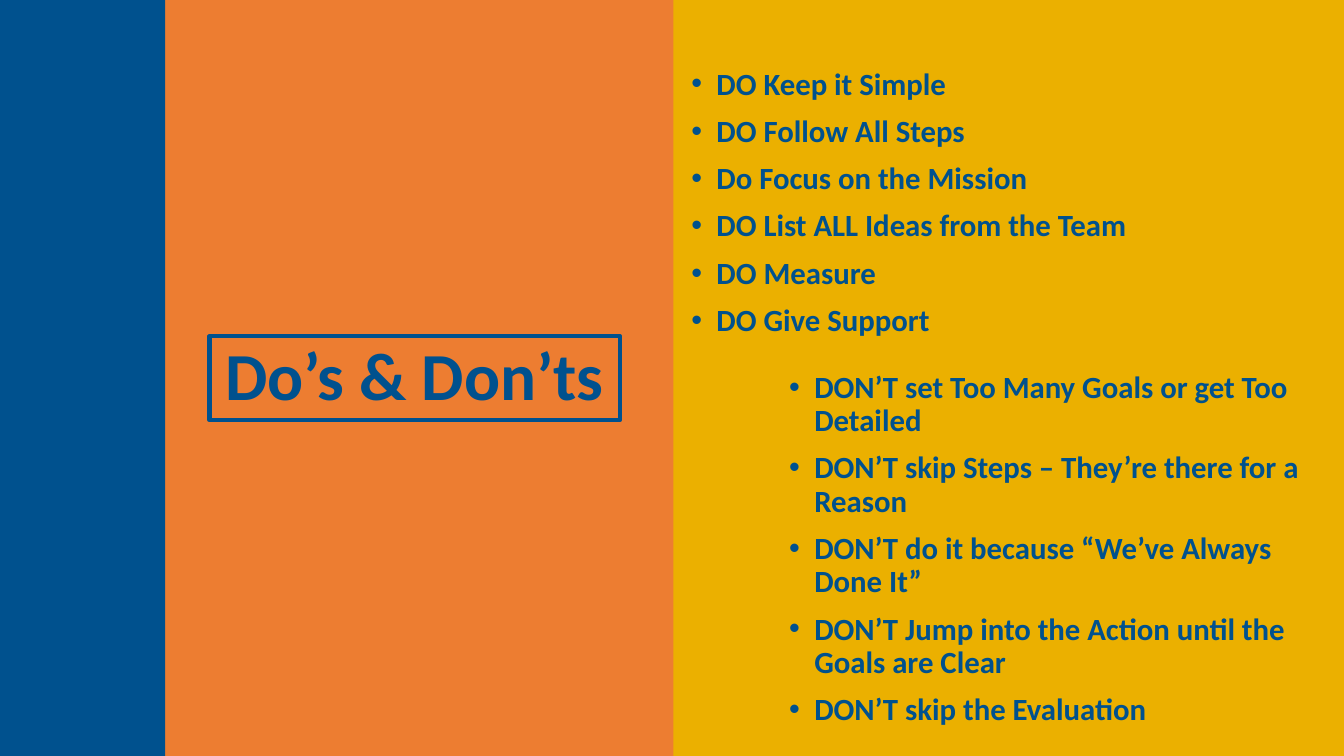
"""Build the Do's and Don'ts slide."""
from lxml.etree import SubElement
from pptx import Presentation
from pptx.dml.color import RGBColor
from pptx.enum.shapes import MSO_SHAPE
from pptx.enum.text import MSO_ANCHOR, PP_ALIGN
from pptx.oxml.ns import qn
from pptx.util import Pt

TITLE = "Do’s & Don’ts"
DOS = [
    "DO Keep it Simple",
    "DO Follow All Steps",
    "Do Focus on the Mission",
    "DO List ALL Ideas from the Team",
    "DO Measure",
    "DO Give Support",
]
DONTS = [
    "DON’T set Too Many Goals or get Too Detailed",
    "DON’T skip Steps – They’re there for a Reason",
    "DON’T do it because “We’ve Always Done It”",
    "DON’T Jump into the Action until the Goals are Clear",
    "DON’T skip the Evaluation",
]

WIDTH, HEIGHT = 960, 540
MIDDLE = WIDTH / 2
BLUE_EDGE = 118
ORANGE_LEFT = 114.5
ORANGE_EDGE = 481
FONT = "Calibri"
BLUE = RGBColor(0x00, 0x51, 0x8E)
ORANGE = RGBColor(0xED, 0x7D, 0x31)
GOLD = RGBColor(0xFF, 0xC0, 0x00)
BLACK = RGBColor(0x00, 0x00, 0x00)


def add_panel(slide, left, right, color, opacity=100):
    """Add a full-height colour band."""
    panel = slide.shapes.add_shape(
        MSO_SHAPE.RECTANGLE, Pt(left), Pt(0), Pt(right - left), Pt(HEIGHT))
    panel.shadow.inherit = False
    panel.line.fill.background()
    panel.fill.solid()
    panel.fill.fore_color.rgb = color
    if opacity < 100:
        shade = panel.fill._xPr.find(".//" + qn("a:srgbClr"))
        SubElement(shade, qn("a:alpha"), val=str(opacity * 1000))


def add_text(slide, lines, box, size=22, align=PP_ALIGN.LEFT,
             anchor=MSO_ANCHOR.TOP, before=0, bullet=None, indent=18):
    """Add a box of bold blue lines and return it."""
    text_box = slide.shapes.add_textbox(*map(Pt, box))
    frame = text_box.text_frame
    frame.word_wrap = True
    frame.vertical_anchor = anchor
    frame.text = "\n".join(lines)
    for paragraph in frame.paragraphs:
        paragraph.alignment = align
        paragraph.line_spacing = 0.9
        paragraph.space_before = Pt(before)
        font = paragraph.runs[0].font
        font.name, font.size, font.bold = FONT, Pt(size), True
        font.color.rgb = BLUE
        if bullet:
            properties = paragraph._p.get_or_add_pPr()
            properties.set("marL", str(Pt(indent)))
            properties.set("indent", str(-Pt(indent)))
            SubElement(properties, qn("a:buFont"), typeface="Arial")
            SubElement(properties, qn("a:buChar"), char=bullet)
    return text_box


def main():
    """Assemble and save the slide."""
    deck = Presentation()
    deck.slide_width, deck.slide_height = Pt(WIDTH), Pt(HEIGHT)
    slide = deck.slides.add_slide(deck.slide_layouts[6])
    slide.background.fill.solid()
    slide.background.fill.fore_color.rgb = GOLD

    add_panel(slide, MIDDLE, WIDTH, BLACK, opacity=8)
    add_panel(slide, ORANGE_LEFT, ORANGE_EDGE, ORANGE)
    title = add_text(slide, [TITLE], (149.6, 240.2, 293.2, 60), size=48,
                     align=PP_ALIGN.CENTER, anchor=MSO_ANCHOR.MIDDLE)
    title.line.color.rgb = BLUE
    title.line.width = Pt(3)
    add_text(slide, DOS, (486.7, 45.4, 398.2, 200.9), before=10, bullet="•")
    add_text(slide, DONTS, (556.6, 262.1, 403.2, 262.8), before=10, bullet="•")
    add_panel(slide, 0, BLUE_EDGE, BLUE)
    deck.save("out.pptx")


if __name__ == "__main__":
    main()
